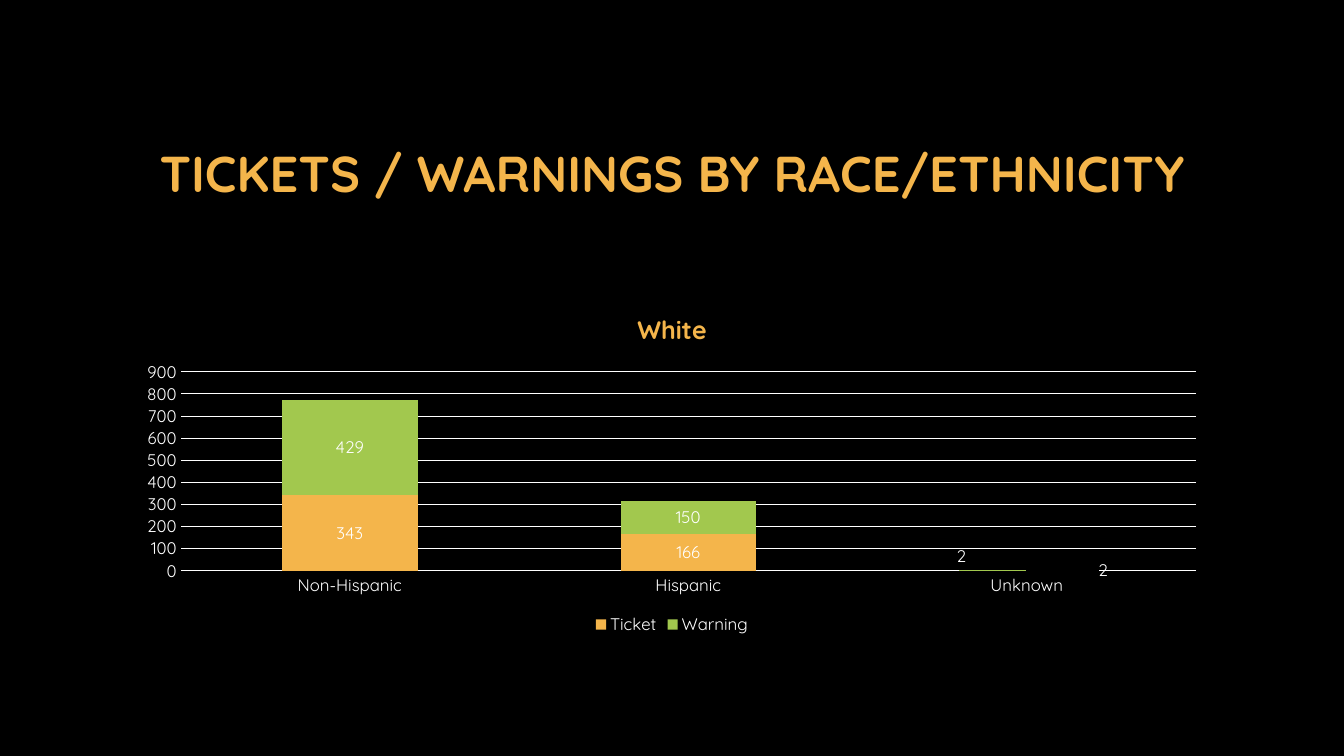
from dataclasses import dataclass

from lxml.etree import SubElement
from pptx import Presentation
from pptx.chart.data import CategoryChartData
from pptx.dml.color import RGBColor
from pptx.enum.chart import XL_CHART_TYPE as ChartType
from pptx.enum.chart import XL_LABEL_POSITION as LabelPosition
from pptx.enum.chart import XL_LEGEND_POSITION as LegendPosition
from pptx.enum.chart import XL_TICK_MARK as TickMark
from pptx.enum.text import MSO_ANCHOR as Anchor
from pptx.enum.text import PP_ALIGN as Align
from pptx.oxml.ns import qn
from pptx.util import Inches, Pt

HEADING = "TICKETS / WARNINGS BY RACE/ETHNICITY"
CHART_TITLE = "White"
CATEGORIES = ["Non-Hispanic", "Hispanic", "Unknown"]
SERIES = [
    {"name": "Ticket", "values": [343, 166, 2], "color": "F4B54B", "last_label": {"x": 0.07, "y": 0}},
    {"name": "Warning", "values": [429, 150, 2], "color": "A2C84E", "last_label": {"x": -0.06, "y": -0.04}},
]
PLOT_AREA = {"layoutTarget": "inner", "xMode": "edge", "yMode": "edge",
             "x": 0.05, "y": 0.225, "w": 0.93, "h": 0.577}


@dataclass(frozen=True)
class Theme:
    font: str = "Quicksand"
    background: str = "000000"
    accent: str = "F4B54B"
    text: str = "FFFFFF"
    heading_size: int = 36
    title_size: int = 18
    label_size: int = 12
    grid_width: float = 0.75


THEME = Theme()
WIDTH, HEIGHT = Inches(13.33), Inches(7.5)
LEFT, CONTENT_WIDTH = Inches(1.25), Inches(10.83)


def color(code):
    return RGBColor.from_string(code)


def style(font, size=THEME.label_size, code=THEME.text, bold=False):
    font.name = THEME.font
    font.size = Pt(size)
    font.bold = bold
    font.color.rgb = color(code)


def fill_layout(layout, values):
    manual = SubElement(layout, qn("c:manualLayout"))
    for name, value in values.items():
        SubElement(manual, qn(f"c:{name}")).set("val", str(value))


def add_heading(page):
    box = page.shapes.add_textbox(LEFT, Inches(0.67), CONTENT_WIDTH, Inches(2.08))
    frame = box.text_frame
    frame.word_wrap = True
    frame.vertical_anchor = Anchor.MIDDLE
    para = frame.paragraphs[0]
    para.text = HEADING
    para.alignment = Align.CENTER
    style(para.font, THEME.heading_size, THEME.accent, True)


def style_axes(chart):
    for axis in (chart.category_axis, chart.value_axis):
        axis.major_tick_mark = axis.minor_tick_mark = TickMark.NONE
        axis.format.line.fill.background()
        style(axis.tick_labels.font)
    scale = chart.value_axis
    scale.minimum_scale, scale.maximum_scale, scale.major_unit = 0, 900, 100
    scale.has_major_gridlines = True
    grid = scale.major_gridlines.format.line
    grid.color.rgb = color(THEME.text)
    grid.width = Pt(THEME.grid_width)


def style_series(series, entry):
    series.format.fill.solid()
    series.format.fill.fore_color.rgb = color(entry["color"])
    labels = series.data_labels
    labels.show_value = True
    style(labels.font)
    last = series.points[len(CATEGORIES) - 1].data_label
    last.position = LabelPosition.CENTER
    style(last.font)
    index = series._element.find(f"{qn('c:dLbls')}/{qn('c:dLbl')}/{qn('c:idx')}")
    layout = SubElement(index.getparent(), qn("c:layout"))
    index.addnext(layout)
    fill_layout(layout, entry["last_label"])


def add_chart(page):
    data = CategoryChartData()
    data.categories = CATEGORIES
    for entry in SERIES:
        data.add_series(entry["name"], entry["values"])
    chart = page.shapes.add_chart(
        ChartType.COLUMN_STACKED, LEFT, Inches(2.92), CONTENT_WIDTH, Inches(3.42), data
    ).chart
    style(chart.font)

    chart.has_title = True
    title = chart.chart_title.text_frame.paragraphs[0]
    title.text = CHART_TITLE
    style(title.font, THEME.title_size, THEME.accent, True)

    chart.has_legend = True
    chart.legend.position = LegendPosition.BOTTOM
    chart.legend.include_in_layout = False
    style(chart.legend.font)

    style_axes(chart)
    plot = chart.plots[0]
    plot.gap_width, plot.overlap = 150, 100
    plot.vary_by_categories = False
    for series, entry in zip(plot.series, SERIES):
        style_series(series, entry)

    area = chart._chartSpace.find(f"{qn('c:chart')}/{qn('c:plotArea')}")
    for old in area.findall(qn("c:layout")):
        area.remove(old)
    layout = SubElement(area, qn("c:layout"))
    area.insert(0, layout)
    fill_layout(layout, PLOT_AREA)


def main():
    deck = Presentation()
    deck.slide_width, deck.slide_height = WIDTH, HEIGHT
    page = deck.slides.add_slide(deck.slide_layouts[6])
    page.background.fill.solid()
    page.background.fill.fore_color.rgb = color(THEME.background)
    add_heading(page)
    add_chart(page)
    deck.save("out.pptx")


if __name__ == "__main__":
    main()
